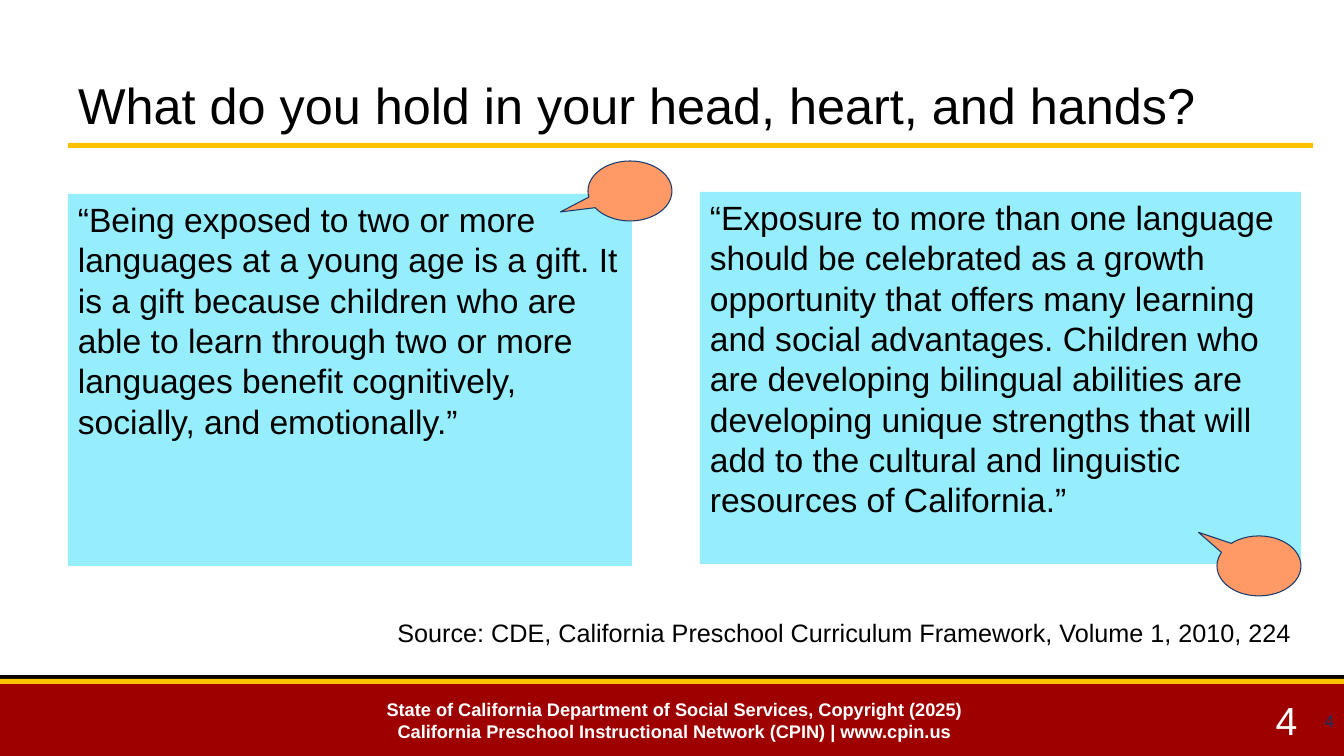
import pptx
import pptx.util
import pptx.dml.color
import pptx.enum.shapes
import pptx.enum.text

RGBColor = pptx.dml.color.RGBColor
SHAPE = pptx.enum.shapes.MSO_SHAPE
ALIGN = pptx.enum.text.PP_ALIGN
ANCHOR = pptx.enum.text.MSO_ANCHOR

BLACK = RGBColor(0x00, 0x00, 0x00)
WHITE = RGBColor(0xFF, 0xFF, 0xFF)
GOLD = RGBColor(0xFF, 0xC0, 0x00)
RED = RGBColor(0x9E, 0x00, 0x00)
CYAN = RGBColor(0x96, 0xED, 0xFC)
ORANGE = RGBColor(0xFF, 0x99, 0x66)
NAVY = RGBColor(0x18, 0x3A, 0x6C)
PAGE_NAVY = RGBColor(0x14, 0x33, 0x67)

WIDTH, HEIGHT = 1344, 756
EMU_PER_PX = 914400 / 100.8


def px(*lengths):
    return [pptx.util.Emu(round(n * EMU_PER_PX)) for n in lengths]


def add_block(slide, box, fill, kind=SHAPE.RECTANGLE):
    sp = slide.shapes.add_shape(kind, *px(*box))
    sp.shadow.inherit = False
    sp.fill.solid()
    sp.fill.fore_color.rgb = fill
    sp.line.fill.background()
    return sp


def write(sp, lines, size, color=BLACK, align=ALIGN.LEFT, anchor=ANCHOR.TOP, bold=False):
    tf = sp.text_frame
    tf.word_wrap = True
    tf.auto_size = pptx.enum.text.MSO_AUTO_SIZE.NONE
    tf.vertical_anchor = anchor
    tf.text = "\n".join(lines)
    for p in tf.paragraphs:
        p.alignment = align
        p.font.name = "Arial"
        p.font.size = pptx.util.Pt(size)
        p.font.bold = bold
        p.font.color.rgb = color


def add_label(slide, box, lines, size, **style):
    write(slide.shapes.add_textbox(*px(*box)), lines, size, **style)


def add_title(slide, box, text):
    x, y, w, h = box
    add_block(slide, (x, y + h + 3, w, 5), GOLD)
    title = slide.shapes.title
    title.left, title.top, title.width, title.height = px(*box)
    write(title, [text], 36, anchor=ANCHOR.BOTTOM)
    title.text_frame.paragraphs[0].line_spacing = 0.85


def add_footer(slide, box, lines, number):
    x, y, w, h = box
    add_block(slide, (x, y, w, h), BLACK)
    add_block(slide, (x, y + 8, w, h - 8), RED)
    add_block(slide, (x, y + 4, w, 5), GOLD)
    centred = {"align": ALIGN.CENTER, "anchor": ANCHOR.MIDDLE, "color": WHITE}
    add_label(slide, (x + 160, y + 8, 1028, 74), lines, 13, bold=True, **centred)
    add_label(slide, (x + w - 115, y + 8, 115, 74), [number], 28, **centred)
    add_label(slide, (x + w - 302, y + 26, 302, 40), [number], 12,
              color=PAGE_NAVY, align=ALIGN.RIGHT, anchor=ANCHOR.MIDDLE)


def add_quote(slide, box, text):
    write(add_block(slide, box, CYAN), [text], 24)


def add_callout(slide, box, tail):
    sp = add_block(slide, box, ORANGE, SHAPE.OVAL_CALLOUT)
    sp.adjustments[0], sp.adjustments[1] = tail
    sp.line.color.rgb = NAVY
    sp.line.width = pptx.util.Pt(0.75)


def main():
    prs = pptx.Presentation()
    prs.slide_width, prs.slide_height = px(WIDTH, HEIGHT)
    slide = prs.slides.add_slide(prs.slide_layouts[5])

    add_title(slide, (68, 14, 1245, 126), "What do you hold in your head, heart, and hands?")
    add_footer(slide, (0, 675, WIDTH, HEIGHT - 675), [
        "State of California Department of Social Services, Copyright (2025)",
        "California Preschool Instructional Network (CPIN) | www.cpin.us",
    ], "4")
    add_quote(slide, (68, 194, 564, 372),
              "“Being exposed to two or more languages at a young age is a gift. "
              "It is a gift because children who are able to learn through two or more "
              "languages benefit cognitively, socially, and emotionally.”")
    add_quote(slide, (700, 192, 601, 372),
              "“Exposure to more than one language should be celebrated as a growth "
              "opportunity that offers many learning and social advantages. Children who "
              "are developing bilingual abilities are developing unique strengths that "
              "will add to the cultural and linguistic resources of California.”")
    add_callout(slide, (588, 161, 84, 60), (-0.83, 0.35))
    add_callout(slide, (1217, 536, 84, 60), (-0.72, -0.56))
    add_label(slide, (373, 612, 928, 40),
              ["Source: CDE, California Preschool Curriculum Framework, Volume 1, 2010, 224"],
              18, align=ALIGN.RIGHT)
    prs.save("out.pptx")


if __name__ == "__main__":
    main()
